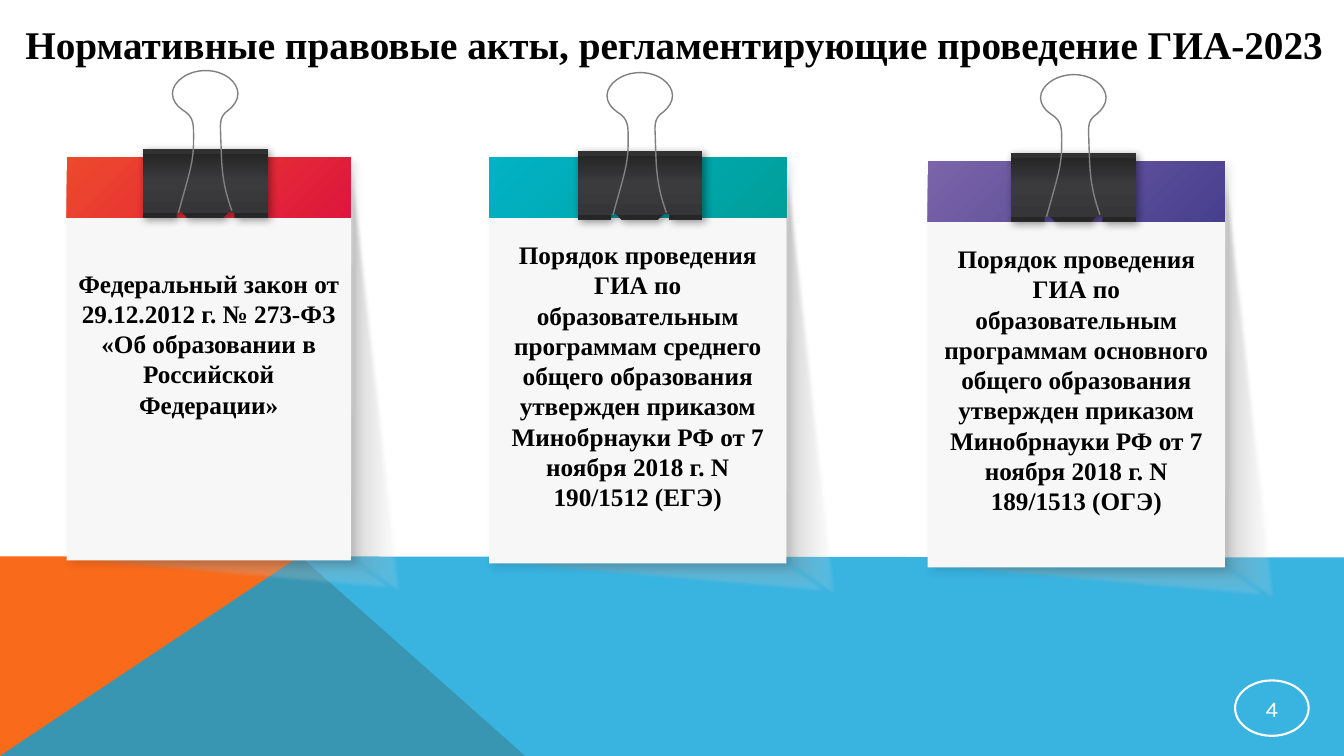
from dataclasses import dataclass

from pptx import Presentation
from pptx import util as u
from pptx.dml.color import RGBColor
from pptx.enum import shapes, text
from pptx.oxml import parse_xml
from pptx.oxml import ns

Inches = u.Inches


@dataclass(frozen=True)
class Theme:
    """Colours, fonts and type sizes of the slide."""
    ink: str = "000000"
    paper: str = "F7F7F7"
    white: str = "FFFFFF"
    orange: str = "F96A1B"
    blue: str = "08A1D9"
    wire: str = "808080"
    red_band: tuple = ((0, "ED492C", 100), (100, "DE163D", 100))
    teal_band: tuple = ((0, "01B3C5", 100), (100, "009F9B", 100))
    violet_band: tuple = ((0, "7B64A9", 100), (100, "473F8E", 100))
    cast: tuple = ((0, "F3F3F3", 12), (100, "808080", 44))
    clip: tuple = ((7, "313132", 100), (7, "262626", 100), (46, "3B3B3D", 100),
                   (93, "363638", 100), (93, "262626", 100))
    serif: str = "Times New Roman"
    sans: str = "Karla"
    title_size: int = 28
    card_size: int = 18
    number_size: int = 16


THEME = Theme()
ACT = ("Порядок проведения ГИА по образовательным программам {} общего образования "
       "утвержден приказом Минобрнауки РФ от 7 ноября 2018 г. N {}")
CARDS = [
    (0.66, 1.56, 2.82, 4.0, THEME.red_band, 0.05, 0.35,
     "Федеральный закон от 29.12.2012 г. № 273-ФЗ «Об образовании в Российской Федерации»"),
    (4.85, 1.56, 2.95, 4.03, THEME.teal_band, 0.35, 0.05,
     ACT.format("среднего", "190/1512 (ЕГЭ)")),
    (9.2, 1.6, 2.95, 4.03, THEME.violet_band, 0.35, 0.05,
     ACT.format("основного", "189/1513 (ОГЭ)")),
]
CLIPS = [(1.42, 1.48), (5.73, 1.5), (10.03, 1.52)]
CLIP_OUTLINE = [(0, 0), (1.24, 0), (1.24, 0.68), (0.91, 0.68), (0.91, 0.62), (0.85, 0.62),
                (0.79, 0.68), (0.44, 0.68), (0.38, 0.62), (0.33, 0.62), (0.33, 0.68), (0, 0.68)]
WIRE_POINTS = [
    (0.35, 0.63),
    (0.46, 0.23), (0.5, 0.13), (0.5, -0.09), (0.5, -0.24), (0.51, -0.32), (0.39, -0.39),
    (0.33, -0.43), (0.29, -0.49), (0.29, -0.55), (0.29, -0.67), (0.44, -0.78), (0.62, -0.78),
    (0.8, -0.78), (0.94, -0.67), (0.94, -0.55), (0.94, -0.49), (0.9, -0.43), (0.85, -0.39),
    (0.74, -0.32), (0.77, -0.23), (0.77, -0.1), (0.78, 0.12), (0.77, 0.31), (0.88, 0.61),
]


def fill_solid(shape, color, alpha=100):
    """Fill a shape with one colour, optionally see-through."""
    shape.fill.solid()
    shape.fill.fore_color.rgb = RGBColor.from_string(color)
    if alpha < 100:
        color_element = next(shape.element.spPr.iter(ns.qn("a:srgbClr")))
        color_element.append(parse_xml(
            f'<a:alpha {ns.nsdecls("a")} val="{alpha * 1000}"/>'))


def fill_gradient(shape, stops, angle):
    """Fill a shape with a linear gradient, angle clockwise in degrees."""
    marks = "".join(
        f'<a:gs pos="{position * 1000}"><a:srgbClr val="{color}">'
        f'<a:alpha val="{alpha * 1000}"/></a:srgbClr></a:gs>'
        for position, color, alpha in stops)
    shape.fill.background()
    properties = shape.element.spPr
    properties.replace(properties.find(ns.qn("a:noFill")), parse_xml(
        f'<a:gradFill {ns.nsdecls("a")} rotWithShape="1"><a:gsLst>{marks}</a:gsLst>'
        f'<a:lin ang="{angle * 60000}" scaled="0"/></a:gradFill>'))


def add_effect(shape, xml):
    """Append one effect to a shape's effect list."""
    shape.element.spPr.find(ns.qn("a:effectLst")).append(parse_xml(xml))


def cast_shadow(shape, alpha, distance):
    """Give a shape a soft shadow to the lower right."""
    add_effect(shape, (
        f'<a:outerShdw {ns.nsdecls("a")} blurRad="{u.Pt(6)}" dist="{u.Pt(distance)}" '
        f'dir="2700000" algn="tl" rotWithShape="0"><a:srgbClr val="{THEME.ink}">'
        f'<a:alpha val="{alpha * 1000}"/></a:srgbClr></a:outerShdw>'))


def add_preset(slide, kind, left, top, width, height):
    """Add a preset shape without line or shadow."""
    shape = slide.shapes.add_shape(
        kind, Inches(left), Inches(top), Inches(width), Inches(height))
    shape.shadow.inherit = False
    shape.line.fill.background()
    return shape


def add_outline(slide, points, left=0, top=0, close=True):
    """Add a freeform through points measured from left and top."""
    places = [(Inches(left + x), Inches(top + y)) for x, y in points]
    builder = slide.shapes.build_freeform(*places[0], scale=1.0)
    builder.add_line_segments(places[1:], close=close)
    shape = builder.convert_to_shape()
    shape.shadow.inherit = False
    shape.line.fill.background()
    return shape


def bend(shape):
    """Turn every three segments of a freeform into one cubic curve."""
    segments = list(shape.element.spPr.iter(ns.qn("a:lnTo")))
    for first in range(0, len(segments), 3):
        group = segments[first:first + 3]
        curve = parse_xml(f'<a:cubicBezTo {ns.nsdecls("a")}/>')
        group[0].addprevious(curve)
        for segment in group:
            curve.append(segment[0])
            segment.getparent().remove(segment)


def write(frame, words, font, size, color, bold=False):
    """Write one centred run into a text frame."""
    frame.word_wrap = True
    frame.auto_size = text.MSO_AUTO_SIZE.NONE
    frame.vertical_anchor = text.MSO_ANCHOR.MIDDLE
    paragraph = frame.paragraphs[0]
    paragraph.alignment = text.PP_ALIGN.CENTER
    run = paragraph.add_run()
    run.text = words
    run.font.name = font
    run.font.size = u.Pt(size)
    run.font.bold = bold
    run.font.color.rgb = RGBColor.from_string(color)


def add_cast(slide, points, left, top, angle):
    """Add a soft-edged grey triangle cast by a card."""
    triangle = add_outline(slide, points, left, top)
    fill_gradient(triangle, THEME.cast, angle)
    add_effect(triangle, f'<a:softEdge {ns.nsdecls("a")} rad="{u.Pt(2.5)}"/>')


def add_card(slide, left, top, width, height, band, inset_top, inset_bottom, words):
    """Add a paper card with its cast shadows and coloured band."""
    right, bottom = left + width, top + height
    add_cast(slide, [(-0.04, 0), (0.51, 0.37), (-0.02, -height - 0.47)], right, bottom, 180)
    add_cast(slide, [(0.03, -0.04), (0.51, 0.31), (-width - 0.58, -0.04)], right, bottom, 270)
    rectangle = shapes.MSO_SHAPE.RECTANGLE
    card = add_preset(slide, rectangle, left, top, width, height)
    fill_solid(card, THEME.paper)
    cast_shadow(card, 10, 4)
    frame = card.text_frame
    frame.margin_top, frame.margin_bottom = Inches(inset_top), Inches(inset_bottom)
    write(frame, words, THEME.serif, THEME.card_size, THEME.ink, True)
    fill_gradient(add_preset(slide, rectangle, left, top, width, 0.6), band, 45)


def add_clip(slide, left, top):
    """Add a binder clip with its wire handle."""
    body = add_outline(slide, CLIP_OUTLINE, left, top)
    fill_gradient(body, THEME.clip, 90)
    cast_shadow(body, 40, 2)
    wire = add_outline(slide, WIRE_POINTS, left, top, close=False)
    bend(wire)
    wire.fill.background()
    wire.line.color.rgb = RGBColor.from_string(THEME.wire)
    wire.line.width = u.Pt(1)


def add_floor(slide):
    """Add the orange and blue base of the slide."""
    orange = add_outline(slide, [(0, 7.5), (0, 5.52), (2.98, 5.52), (5.21, 7.5)])
    fill_solid(orange, THEME.orange)
    blue = add_outline(slide, [(0, 7.5), (2.97, 5.52), (13.33, 5.53), (13.33, 7.5)])
    fill_solid(blue, THEME.blue, 80)


def add_title(slide, words):
    """Place and write the slide title."""
    title = slide.shapes.title
    title.left, title.top = Inches(0.02), Inches(0)
    title.width, title.height = Inches(13.33), Inches(0.87)
    write(title.text_frame, words, THEME.serif, THEME.title_size, THEME.ink, True)


def add_page_number(slide, number):
    """Add the ringed page number."""
    ring = add_preset(slide, shapes.MSO_SHAPE.OVAL, 12.25, 6.75, 0.73, 0.55)
    ring.fill.background()
    ring.line.color.rgb = RGBColor.from_string(THEME.white)
    ring.line.width = u.Pt(1.5)
    frame = ring.text_frame
    frame.margin_left = frame.margin_right = Inches(0.01)
    frame.margin_top = frame.margin_bottom = Inches(0.01)
    write(frame, number, THEME.sans, THEME.number_size, THEME.white)


def main():
    """Build and save the slide."""
    presentation = Presentation()
    presentation.slide_width, presentation.slide_height = Inches(13.33), Inches(7.5)
    slide = presentation.slides.add_slide(presentation.slide_layouts[5])
    add_floor(slide)
    add_title(slide, "Нормативные правовые акты, регламентирующие проведение ГИА-2023")
    add_page_number(slide, "4")
    for card in CARDS:
        add_card(slide, *card)
    for clip in CLIPS:
        add_clip(slide, *clip)
    presentation.save("out.pptx")


if __name__ == "__main__":
    main()
